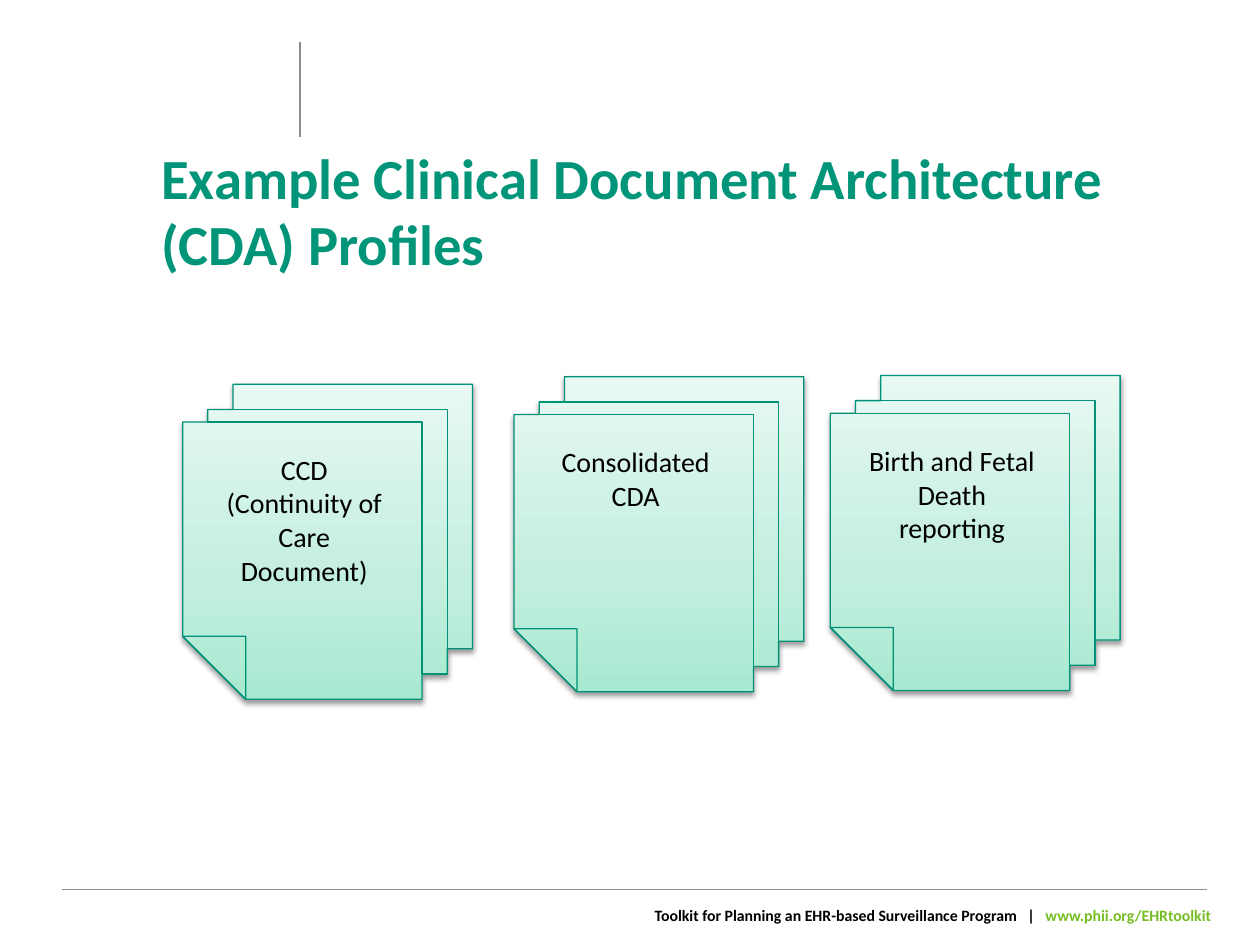
from dataclasses import dataclass

from lxml import etree
from pptx import Presentation
from pptx import util as u
from pptx.dml.color import RGBColor
from pptx.enum import shapes, text
from pptx.oxml import parse_xml
from pptx.oxml.ns import nsdecls, qn


@dataclass(frozen=True)
class Theme:
    font: str = "Calibri"
    heading: str = "009579"
    ink: str = "000000"
    link: str = "76BD22"
    rule: str = "8C8C8C"
    page_edge: str = "009276"
    page_stops: tuple = ((0, "A7E9D1"), (35, "C2EEDE"), (100, "E7F9F2"))
    title_size: float = 32.4
    page_size: float = 16
    footer_size: float = 9
    thin: float = 0.75


COLUMNS, ROWS = 100, 75  # square grid cells of a tenth of an inch


def stack_outlines():
    """Contours of three stacked pages, in cells from the top left corner."""
    wide, high = 19.1, 21.4
    (fx, fy), (mx, my), (bx, by) = (0, 3.2), (1.7, 1.7), (3.6, 0)
    fold_x, fold_y = 4.6, fy + high - 4.1
    corner = [(fold_x, fy + high), (fx, fold_y)]
    steps = [(fx + wide, my + high), (fx + wide, fy)]
    outer = [(fx, fold_y), (fx, fy), (mx, fy), (mx, my), (bx, my), (bx, by),
             (bx + wide, by), (bx + wide, by + high), (mx + wide, by + high),
             (mx + wide, my + high), steps[0], (fx + wide, fy + high), corner[0]]
    middle = [(bx, my), (mx + wide, my), (mx + wide, my + high), *steps,
              (mx, fy), (mx, my)]
    fold = [(fx, fold_y), (fold_x, fold_y), *corner]
    return outer, middle, fold


class Deck:
    def __init__(self, theme):
        self.theme = theme
        self.prs = Presentation()
        self.prs.slide_width, self.prs.slide_height = u.Inches(10), u.Inches(7.5)
        self.slide = self.prs.slides.add_slide(self.prs.slide_layouts[5])

    def x(self, columns):
        return round(self.prs.slide_width * columns / COLUMNS)

    def y(self, rows):
        return round(self.prs.slide_height * rows / ROWS)

    def box(self, left, top, width, height):
        return self.x(left), self.y(top), self.x(width), self.y(height)

    def add_words(self, paragraph, words, size, color, bold=False):
        run = paragraph.add_run()
        run.text = words
        style = {"name": self.theme.font, "size": u.Pt(size), "bold": bold}
        for key, value in style.items():
            setattr(run.font, key, value)
        run.font.color.rgb = RGBColor.from_string(color)
        return run

    def title(self, words, left, top, width, height):
        heading = self.slide.shapes.title
        place = zip(("left", "top", "width", "height"),
                    self.box(left, top, width, height))
        for key, value in place:
            setattr(heading, key, value)
        frame = heading.text_frame
        frame.auto_size = text.MSO_AUTO_SIZE.NONE
        frame.vertical_anchor = text.MSO_ANCHOR.BOTTOM
        paragraph = frame.paragraphs[0]
        paragraph.alignment = text.PP_ALIGN.LEFT
        paragraph.line_spacing = u.Pt(38)
        self.add_words(paragraph, words, self.theme.title_size,
                       self.theme.heading, True)

    def rule(self, x1, y1, x2, y2):
        line = self.slide.shapes.add_connector(
            shapes.MSO_CONNECTOR.STRAIGHT,
            self.x(x1), self.y(y1), self.x(x2), self.y(y2))
        line.line.color.rgb = RGBColor.from_string(self.theme.rule)
        line.line.width = u.Pt(self.theme.thin)
        etree.SubElement(line._element.spPr, qn("a:effectLst"))

    def footer(self, name, address, left, top, width, height):
        frame = self.slide.shapes.add_textbox(
            *self.box(left, top, width, height)).text_frame
        frame.word_wrap = True
        paragraph = frame.paragraphs[0]
        paragraph.alignment = text.PP_ALIGN.RIGHT
        size = self.theme.footer_size
        self.add_words(paragraph, name, size, self.theme.ink, True)
        bar = self.add_words(paragraph, " |", size, self.theme.ink, True)
        bar.font._element.set("spc", "400")  # widens the gaps around the bar
        self.add_words(paragraph, " " + address, size, self.theme.link, True)

    def page_stack(self, words, left, top):
        outlines = stack_outlines()
        builder = self.slide.shapes.build_freeform(
            *outlines[0][0], scale=(self.x(1), self.y(1)))
        builder.add_line_segments(outlines[0][1:], close=True)
        for outline in outlines[1:]:
            builder.move_to(*outline[0])
            builder.add_line_segments(outline[1:], close=True)
        stack = builder.convert_to_shape(self.x(left), self.y(top))
        self.split_contours(stack)
        self.paint(stack)

        # Caption sits on the front page
        frame = stack.text_frame
        layout = {"word_wrap": True, "vertical_anchor": text.MSO_ANCHOR.TOP,
                  "margin_left": self.x(2.65), "margin_right": self.x(6.35),
                  "margin_top": self.y(5.4), "margin_bottom": 0}
        for key, value in layout.items():
            setattr(frame, key, value)
        paragraph = frame.paragraphs[0]
        paragraph.alignment = text.PP_ALIGN.CENTER
        self.add_words(paragraph, words, self.theme.page_size, self.theme.ink)

    def split_contours(self, stack):
        """Give inner contours their own unfilled paths, so none cuts a hole."""
        first = stack._element.find(".//" + qn("a:path"))
        current = first
        for step in list(first)[1:]:
            if step.tag == qn("a:moveTo"):
                current = etree.SubElement(first.getparent(), qn("a:path"))
                for key in ("w", "h"):
                    current.set(key, first.get(key))
                current.set("fill", "none")
            if current is not first:
                current.append(step)

    def paint(self, stack):
        stack.line.color.rgb = RGBColor.from_string(self.theme.page_edge)
        stack.line.width = u.Pt(self.theme.thin)
        stops = "".join(
            f'<a:gs pos="{at * 1000}"><a:srgbClr val="{color}"/></a:gs>'
            for at, color in self.theme.page_stops)
        gradient = parse_xml(
            f'<a:gradFill {nsdecls("a")} rotWithShape="1"><a:gsLst>{stops}</a:gsLst>'
            '<a:lin ang="16200000" scaled="0"/></a:gradFill>')
        shadow = parse_xml(
            f'<a:effectLst {nsdecls("a")}><a:outerShdw blurRad="{u.Pt(3.1)}" '
            f'dist="{u.Pt(1.6)}" dir="5400000" rotWithShape="0">'
            f'<a:srgbClr val="{self.theme.ink}"><a:alpha val="38000"/></a:srgbClr>'
            '</a:outerShdw></a:effectLst>')
        outline = stack._element.spPr.find(qn("a:ln"))
        outline.addprevious(gradient)
        outline.addnext(shadow)


def main():
    deck = Deck(Theme())

    # Frame lines and footer
    deck.rule(23.8, 3.3, 23.8, 10.9)
    deck.rule(95.8, 70.6, 4.9, 70.6)
    deck.footer("Toolkit for Planning an EHR-based Surveillance Program",
                "www.phii.org/EHRtoolkit", 29.3, 71.4, 67.8, 5.6)

    # Title
    deck.title("Example Clinical Document Architecture (CDA) Profiles",
               11.8, 15.1, 83.7, 7.4)

    # Profiles
    profiles = (("CCD (Continuity of Care Document)", 14.5, 30.5),
                ("Consolidated CDA", 40.8, 29.9),
                ("Birth and Fetal Death reporting", 65.9, 29.8))
    for profile in profiles:
        deck.page_stack(*profile)

    deck.prs.save("out.pptx")


if __name__ == "__main__":
    main()
